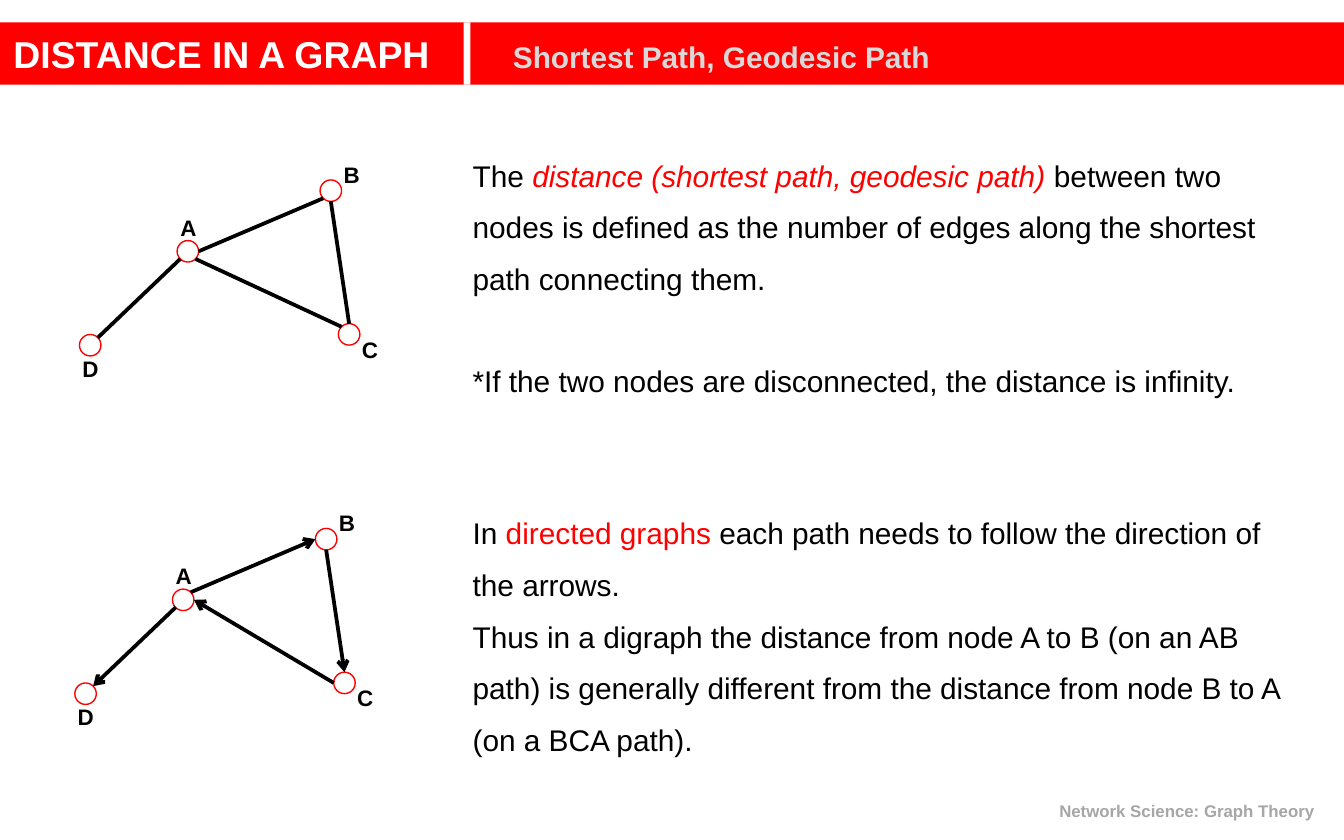
from math import cos, radians, sin

from lxml.etree import SubElement
from pptx import Presentation
from pptx.dml.color import RGBColor
from pptx.enum.shapes import MSO_CONNECTOR as Connector, MSO_SHAPE as Shape
from pptx.enum.text import MSO_ANCHOR as Anchor, MSO_AUTO_SIZE as AutoSize, PP_ALIGN as Align
from pptx.oxml.ns import qn
from pptx.util import Pt

RED, BLACK, WHITE = "FF0000", "000000", "FFFFFF"
BAND_TOP, BAND_HEIGHT = 12, 33.4
DIAMETER = 11.5
LINE_SPACING, BLANK_LINE = 1.45, 26.7

ANGLES = {"E": 0, "SE": 45, "S": 90, "SW": 135, "W": 180, "NW": 225, "N": 270, "NE": 315}
NODES = {"A": (94.9, 128.9), "B": (171.5, 96.4), "C": (181.3, 173.4), "D": (42.6, 179.2)}
LABEL_OFFSETS = {"A": (-3.6, -14.4), "B": (7.2, -10.1), "C": (7.2, 6.5), "D": (-3.8, 10.8)}
UNDIRECTED_EDGES = [
    ("D", "NE", "A", "SW"),
    ("A", "E", "B", "SW"),
    ("C", "N", "B", "S"),
    ("A", "SE", "C", "NW"),
]
DIRECTED_EDGES = [
    ("A", "SW", "D", "NE"),
    ("A", "NE", "B", "W"),
    ("B", "S", "C", "N"),
    ("C", "W", "A", "E"),
]
EXPLANATION = [
    (0, [
        ("The ", {}),
        ("distance (shortest path, geodesic path) ", {"color": RED, "italic": True}),
        ("between two nodes is defined as the number of edges along the shortest "
         "path connecting them.", {}),
    ]),
    (1, [("*If the two nodes are disconnected, the distance is infinity.", {})]),
    (2, [
        ("In ", {}),
        ("directed graphs ", {"color": RED}),
        ("each path needs to follow the direction of the arrows.", {}),
    ]),
    (0, [
        ("Thus in a digraph the distance from node A to B (on an AB path) is generally "
         "different from the distance from node B to A (on a BCA path).", {}),
    ]),
]


def rgb(color):
    return RGBColor.from_string(color)


def add_text(paragraph, text, size=16, color=BLACK, bold=False, italic=False):
    run = paragraph.add_run()
    run.text = text
    font = run.font
    font.name, font.size, font.bold, font.italic = "Arial", Pt(size), bold, italic
    font.color.rgb = rgb(color)


def place(shape, left, top, width, height):
    shape.left, shape.top = Pt(left), Pt(top)
    shape.width, shape.height = Pt(width), Pt(height)


def prepare_frame(shape, anchor=Anchor.TOP):
    frame = shape.text_frame
    frame.word_wrap = True
    frame.auto_size = AutoSize.NONE
    frame.vertical_anchor = anchor
    return frame


def fill_title(title):
    place(title, 0, BAND_TOP, 720, BAND_HEIGHT)
    title.fill.solid()
    title.fill.fore_color.rgb = rgb(RED)
    paragraph = prepare_frame(title, Anchor.MIDDLE).paragraphs[0]
    paragraph.alignment = Align.LEFT
    paragraph.space_before = Pt(0)
    tabs = SubElement(paragraph._p.get_or_add_pPr(), qn("a:tabLst"))
    SubElement(tabs, qn("a:tab"), pos=str(Pt(267.6)), algn="l")
    add_text(paragraph, "DISTANCE IN A GRAPH\t", size=20, color=WHITE, bold=True)
    add_text(paragraph, "Shortest Path, Geodesic Path", color="D9D9D9", bold=True)


def fill_body(body):
    place(body, 246, 72, 456, 332)
    frame = prepare_frame(body)
    for index, (blank_lines, runs) in enumerate(EXPLANATION):
        paragraph = frame.add_paragraph() if index else frame.paragraphs[0]
        paragraph.line_spacing = LINE_SPACING
        paragraph.space_before = Pt(blank_lines * BLANK_LINE)
        properties = paragraph._p.get_or_add_pPr()
        properties.set("marL", "0")
        properties.set("indent", "0")
        SubElement(properties, qn("a:buNone"))
        for text, text_format in runs:
            add_text(paragraph, text, **text_format)


def add_divider(slide):
    divider = slide.shapes.add_shape(Shape.RECTANGLE, Pt(248.4), Pt(BAND_TOP), Pt(3.6), Pt(BAND_HEIGHT))
    divider.shadow.inherit = False
    divider.fill.solid()
    divider.fill.fore_color.rgb = rgb(WHITE)
    divider.line.fill.background()


def add_footer(slide):
    footer = slide.shapes.add_textbox(Pt(509.8), Pt(425.5), Pt(203.8), Pt(18))
    paragraph = prepare_frame(footer).paragraphs[0]
    paragraph.alignment = Align.RIGHT
    add_text(paragraph, "Network Science: Graph Theory ", size=9, color="A6A6A6", bold=True)


def add_node(slide, left, top):
    node = slide.shapes.add_shape(Shape.OVAL, Pt(left), Pt(top), Pt(DIAMETER), Pt(DIAMETER))
    node.shadow.inherit = False
    node.fill.background()
    node.line.color.rgb = rgb(RED)
    node.line.width = Pt(0.75)


def add_label(slide, name, left, top):
    label = slide.shapes.add_textbox(Pt(left), Pt(top), Pt(19.4), Pt(14.4))
    frame = prepare_frame(label)
    frame.margin_left = frame.margin_top = frame.margin_bottom = 0
    frame.margin_right = Pt(2.2)
    paragraph = frame.paragraphs[0]
    paragraph.alignment = Align.CENTER
    paragraph._p.get_or_add_pPr().set("marL", str(Pt(2.2)))
    add_text(paragraph, name, size=12, bold=True)


def rim_point(position, side):
    angle, radius = radians(ANGLES[side]), DIAMETER / 2
    left, top = position
    return Pt(left + radius * (1 + cos(angle))), Pt(top + radius * (1 + sin(angle)))


def add_edge(slide, start, end, directed):
    edge = slide.shapes.add_connector(Connector.STRAIGHT, *start, *end)
    edge.line.color.rgb = rgb(BLACK)
    edge.line.width = Pt(2)
    if directed:
        SubElement(edge.line._get_or_add_ln(), qn("a:tailEnd"), type="arrow")
    SubElement(edge._element.spPr, qn("a:effectLst"))


def add_graph(slide, edges, shift_x=0, shift_y=0, directed=False):
    positions = {name: (x + shift_x, y + shift_y) for name, (x, y) in NODES.items()}
    for name, (left, top) in positions.items():
        add_node(slide, left, top)
        offset_x, offset_y = LABEL_OFFSETS[name]
        add_label(slide, name, left + offset_x, top + offset_y)
    for source, source_side, target, target_side in edges:
        start = rim_point(positions[source], source_side)
        end = rim_point(positions[target], target_side)
        add_edge(slide, start, end, directed)


def main():
    presentation = Presentation()
    presentation.slide_width, presentation.slide_height = Pt(720), Pt(450)
    slide = presentation.slides.add_slide(presentation.slide_layouts[1])
    fill_title(slide.shapes.title)
    fill_body(slide.placeholders[1])
    add_divider(slide)
    add_footer(slide)
    add_graph(slide, UNDIRECTED_EDGES)
    add_graph(slide, DIRECTED_EDGES, shift_x=-2.5, shift_y=186.7, directed=True)
    presentation.save("out.pptx")


if __name__ == "__main__":
    main()
